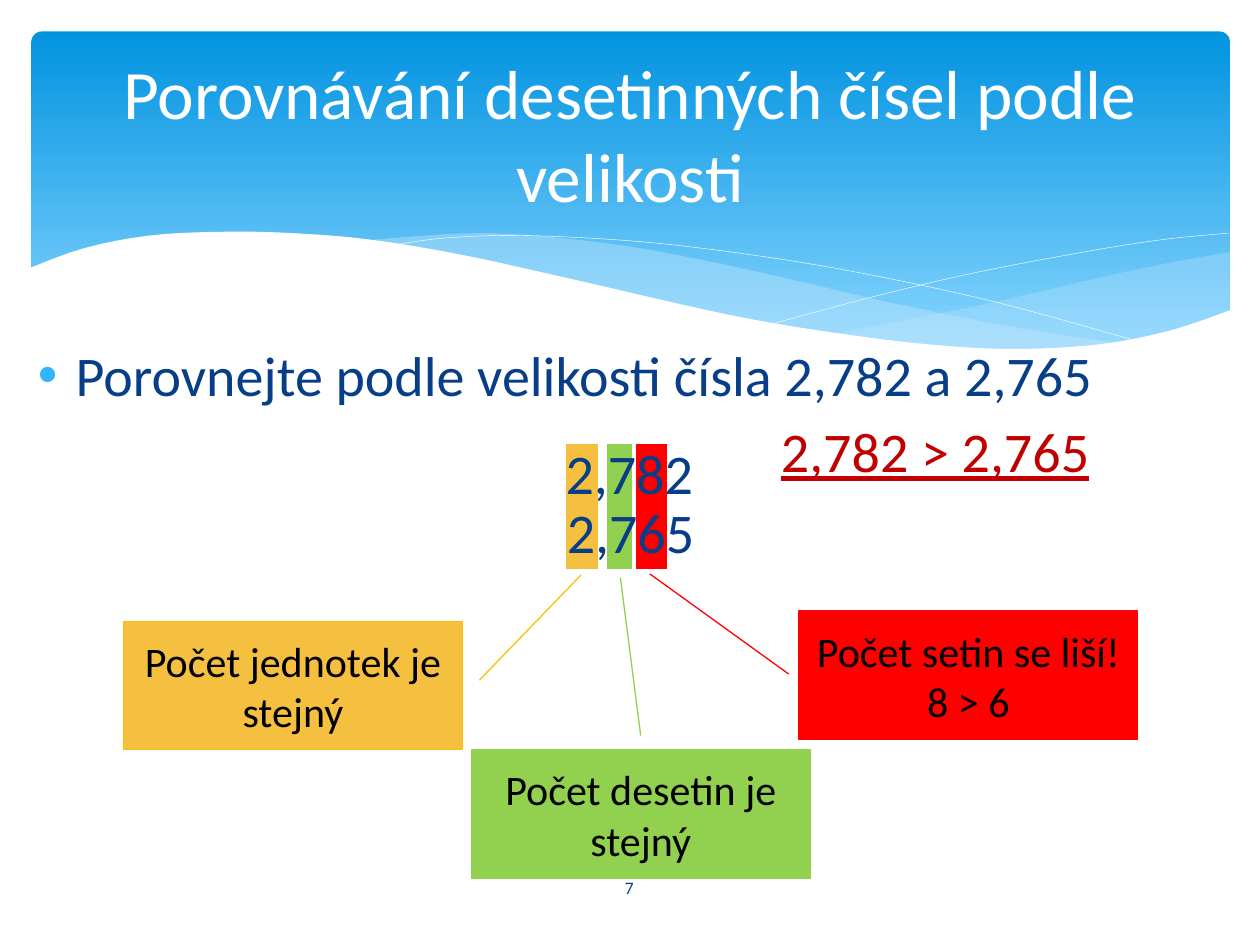
from lxml.etree import SubElement
from pptx import Presentation
from pptx.dml.color import RGBColor
from pptx.enum.shapes import MSO_SHAPE
from pptx.enum.text import MSO_ANCHOR, MSO_AUTO_SIZE, PP_ALIGN
from pptx.oxml.ns import qn
from pptx.util import Inches, Pt

COLORS = {
    "white": "FFFFFF", "black": "000000", "navy": "073E87", "dark_red": "C00000",
    "sky": "0293E0", "light_sky": "83D3FE", "wave": "C6E7FC", "bullet": "31B6FD",
    "green": "92D050", "red": "FF0000", "yellow": "F5C040", "gold": "FFC000",
}


def smooth(points, steps=8):
    """Points along a Catmull-Rom curve through the given points."""
    ends = [points[0]] + points + [points[-1]]
    curve = [points[0]]
    for a, b, c, d in zip(ends, ends[1:], ends[2:], ends[3:]):
        for i in range(1, steps + 1):
            t = i / steps
            curve.append(tuple(
                0.5 * (2 * q + (r - p) * t + (2 * p - 5 * q + 4 * r - s) * t ** 2
                       + (3 * q - p - 3 * r + s) * t ** 3)
                for p, q, r, s in zip(a, b, c, d)))
    return curve


class SlideBuilder:
    font = "Calibri"

    def __init__(self, prs):
        self.s = prs.slides.add_slide(prs.slide_layouts[1])

    def color(self, name):
        return RGBColor.from_string(COLORS[name])

    def paint(self, sp, fill=None, line=None, width=0.75, alpha=None):
        sp.shadow.inherit = False
        if fill:
            sp.fill.solid()
            sp.fill.fore_color.rgb = self.color(fill)
            if alpha:
                clr = sp.element.find(".//" + qn("a:srgbClr"))
                SubElement(clr, qn("a:alpha"), val=str(alpha * 1000))
        else:
            sp.fill.background()
        if line:
            sp.line.color.rgb = self.color(line)
            sp.line.width = Pt(width)
        else:
            sp.line.fill.background()

    def set_text(self, sp, text, size, color, align=PP_ALIGN.LEFT,
                 anchor=MSO_ANCHOR.TOP, wrap=True, underline=None):
        tf = sp.text_frame
        tf.text = text
        tf.word_wrap = wrap
        tf.auto_size = MSO_AUTO_SIZE.NONE if wrap else MSO_AUTO_SIZE.SHAPE_TO_FIT_TEXT
        tf.vertical_anchor = anchor
        for p in tf.paragraphs:
            p.alignment = align
            for r in p.runs:
                r.font.name = self.font
                r.font.size = Pt(size)
                r.font.color.rgb = self.color(color)
                r.font.underline = underline

    def banner(self, x, y, w, h):
        sp = self.s.shapes.add_shape(MSO_SHAPE.ROUNDED_RECTANGLE, *map(Inches, (x, y, w, h)))
        self.paint(sp)
        sp.adjustments[0] = 0.03
        sp.fill.gradient()
        sp.fill.gradient_angle = 270
        for stop, pos, name in zip(sp.fill.gradient_stops, (0, 0.9), ("sky", "light_sky")):
            stop.position = pos
            stop.color.rgb = self.color(name)

    def wave(self, points, close=True, **style):
        pts = [(Inches(x), Inches(y)) for x, y in points]
        fb = self.s.shapes.build_freeform(*pts[0])
        fb.add_line_segments(pts[1:], close=close)
        self.paint(fb.convert_to_shape(), **style)

    def column(self, x, fill):
        sp = self.s.shapes.add_shape(MSO_SHAPE.RECTANGLE, *map(Inches, (x, 3.51, 0.28, 1.02)))
        self.paint(sp, fill, "white", 2)

    def callout(self, x, y, text, fill, line, pointer):
        sp = self.s.shapes.add_shape(MSO_SHAPE.LINE_CALLOUT_1, *map(Inches, (x, y, 2.69, 1.02)))
        for i, value in enumerate(pointer):
            sp.adjustments[i] = value
        self.paint(sp, fill, line)
        self.set_text(sp, text, 24, "black", PP_ALIGN.CENTER, MSO_ANCHOR.MIDDLE)

    def textbox(self, x, y, w, h, text, size, color, **style):
        sp = self.s.shapes.add_textbox(*map(Inches, (x, y, w, h)))
        self.set_text(sp, text, size, color, **style)

    def placeholder(self, idx, x, y, w, h, text, size, color, **style):
        sp = self.s.placeholders[idx]
        sp.left, sp.top, sp.width, sp.height = map(Inches, (x, y, w, h))
        self.set_text(sp, text, size, color, **style)
        sp.element.getparent().append(sp.element)  # in front of the banner
        return sp

    def bullet(self, p, color, indent):
        pPr = p._p.get_or_add_pPr()
        pPr.set("marL", str(Inches(indent)))
        pPr.set("indent", str(-Inches(indent)))
        clr = SubElement(pPr, qn("a:buClr"))
        SubElement(clr, qn("a:srgbClr"), val=COLORS[color])
        SubElement(pPr, qn("a:buChar"), char="•")


def main():
    prs = Presentation()
    prs.slide_width, prs.slide_height = Inches(10), Inches(7.5)
    b = SlideBuilder(prs)

    # Banner with waves
    b.banner(0.25, 0.25, 9.51, 2.7)
    b.wave(smooth([(9.76, 2), (9.21, 2.1), (8.61, 2.23), (7.79, 2.42), (6.61, 2.65)])
           + smooth([(6.61, 2.65), (7.32, 2.74), (8.03, 2.78), (8.72, 2.74),
                     (9.28, 2.63), (9.76, 2.47)]),
           fill="wave", alpha=29)
    b.wave(smooth([(8.93, 2.73), (8.07, 2.6), (7.06, 2.4), (6.29, 2.22), (5.41, 2.03),
                   (4.65, 1.91), (3.8, 1.85), (2.86, 1.91)])
           + smooth([(2.86, 1.91), (3.62, 2.03), (4.49, 2.22), (5.66, 2.48), (6.65, 2.66),
                     (7.48, 2.76), (8.18, 2.78), (8.93, 2.73)]),
           fill="wave", alpha=40)
    b.wave(smooth([(3.09, 1.95), (3.53, 1.89), (4.16, 1.87), (5.1, 1.92), (6.08, 2.04),
                   (6.95, 2.19), (7.95, 2.41), (9.07, 2.72)]),
           close=False, line="white", width=0.25)
    b.wave(smooth([(6.13, 2.57), (6.95, 2.35), (7.76, 2.16), (8.66, 1.99), (9.24, 1.9),
                   (9.75, 1.85)]),
           close=False, line="white", width=0.25)
    b.wave(smooth([(9.77, 2.46), (9.3, 2.62), (8.75, 2.73), (8.09, 2.77), (7.44, 2.74),
                   (6.68, 2.65), (5.79, 2.5), (4.47, 2.2), (3.65, 2.02), (2.92, 1.9),
                   (2.3, 1.85), (1.77, 1.84), (1.19, 1.87), (0.67, 1.97), (0.23, 2.13)])
           + [(0.23, 3.29), (9.77, 3.29)],
           fill="white")

    # Digit columns and their callouts
    for x, fill in ((4.8, "green"), (5.03, "red"), (4.48, "yellow")):
        b.column(x, fill)
    b.callout(3.74, 5.95, "Počet desetin je stejný", "green", "green",
              (-0.11, 0.5, -1.34, 0.44))
    b.callout(6.34, 4.85, "Počet setin se liší!\n8 > 6", "red", "red",
              (0.49, -0.03, -0.29, -0.44))
    b.callout(0.98, 4.93, "Počet jednotek je stejný", "yellow", "gold",
              (0.46, 1.05, -0.36, 1.35))

    # Task, slide number and title
    body = b.placeholder(1, 0.2, 2.65, 9.61, 0.86,
                         "Porovnejte podle velikosti čísla 2,782 a 2,765", 32, "navy")
    b.bullet(body.text_frame.paragraphs[0], "bullet", 0.3)
    b.textbox(4.36, 6.84, 1.27, 0.4, "7", 10, "navy",
              align=PP_ALIGN.CENTER, anchor=MSO_ANCHOR.MIDDLE)
    b.placeholder(0, 0.5, 0.37, 9, 1.37, "Porovnávání desetinných čísel podle velikosti",
                  39.6, "white", align=PP_ALIGN.CENTER, anchor=MSO_ANCHOR.MIDDLE)

    # Compared numbers and the result
    b.textbox(4.39, 3.43, 1.23, 0.64, "2,782", 32, "navy", wrap=False)
    b.textbox(4.4, 3.9, 1.23, 0.64, "2,765", 32, "navy", wrap=False)
    b.textbox(6.1, 3.26, 2.67, 0.64, "2,782 > 2,765", 32, "dark_red",
              wrap=False, underline=True)

    prs.save("out.pptx")


if __name__ == "__main__":
    main()
